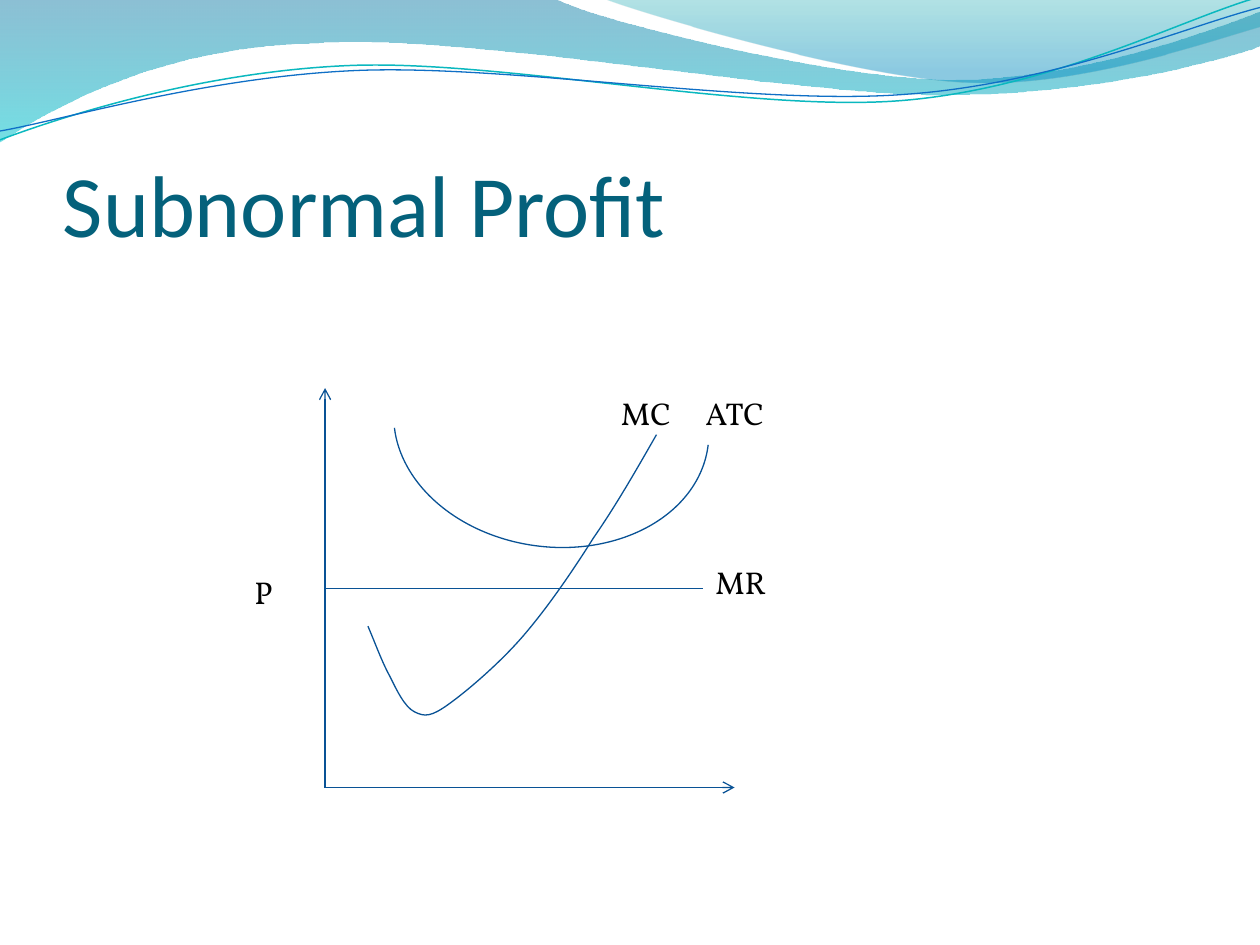
from dataclasses import dataclass
from math import cos, radians, sin

from lxml import etree
from pptx import Presentation
from pptx.dml.color import RGBColor
from pptx.enum.shapes import MSO_CONNECTOR, MSO_SHAPE
from pptx.enum.text import MSO_ANCHOR, MSO_AUTO_SIZE
from pptx.oxml.ns import qn
from pptx.util import Inches, Pt

STRAIGHT = MSO_CONNECTOR.STRAIGHT
ARC = MSO_SHAPE.ARC
BOTTOM = MSO_ANCHOR.BOTTOM
GROW = MSO_AUTO_SIZE.SHAPE_TO_FIT_TEXT


@dataclass(frozen=True)
class Theme:
    title_font: str = "Calibri"
    label_font: str = "Vollkorn"
    title_size: int = 50
    label_size: int = 18
    title_color: str = "04617B"
    label_color: str = "000000"
    diagram_color: str = "095295"
    teal: str = "0AB8BF"
    blue: str = "0F6FC6"
    thin: float = 0.75
    thick: float = 0.85
    wave_stops: tuple = ((0, "0074A1", 45), (1, "00C6CF", 55))
    crest_stops: tuple = ((0, "00A1A9", 30), (0.8, "008BBF", 45))


def turn(point, pivot, degrees):
    angle = radians(degrees)
    across, down = point[0] - pivot[0], point[1] - pivot[1]
    return (pivot[0] + across * cos(angle) - down * sin(angle),
            pivot[1] + across * sin(angle) + down * cos(angle))


class SlideBuilder:
    def __init__(self, page, theme):
        self.page = page
        self.theme = theme

    def outline(self, shape, color, width):
        shape.line.color.rgb = RGBColor.from_string(color)
        shape.line.width = Pt(width)

    def freeform(self, segments, closed, rotation=0, pivot=(0, 0)):
        points = [turn(segment[index:index + 2], pivot, -rotation)
                  for segment in segments for index in range(0, len(segment), 2)]
        corners = [(Inches(x), Inches(y)) for x, y in points]
        builder = self.page.shapes.build_freeform(*corners[0])
        builder.add_line_segments(corners[1:], close=closed)
        shape = builder.convert_to_shape()
        shape.shadow.inherit = False
        shape.rotation = rotation
        straight = iter(list(shape.element.spPr.iter(qn("a:lnTo"))))
        for segment in segments[1:]:
            steps = [next(straight) for _ in range(len(segment) // 2)]
            if len(steps) == 3:
                bend = etree.Element(qn("a:cubicBezTo"))
                steps[0].addprevious(bend)
                for step in steps:
                    bend.append(step[0])
                    step.getparent().remove(step)
        return shape

    def band(self, segments, stops):
        shape = self.freeform(segments, True)
        shape.line.fill.background()
        shape.fill.gradient()
        shape.fill.gradient_angle = 270
        for stop, (position, color, _) in zip(shape.fill.gradient_stops, stops):
            stop.position = position
            stop.color.rgb = RGBColor.from_string(color)
        tags = shape.element.spPr.iter(qn("a:srgbClr"))
        for tag, (_, _, opacity) in zip(tags, stops):
            etree.SubElement(tag, qn("a:alpha"), val=str(opacity * 1000))

    def curve(self, segments, color, width, rotation=0, pivot=(0, 0)):
        shape = self.freeform(segments, False, rotation, pivot)
        shape.fill.background()
        self.outline(shape, color, width)
        return shape

    def group(self, shapes):
        self.page.shapes.add_group_shape(shapes)

    def line(self, start, end, arrow=False):
        ends = [Inches(value) for value in (*start, *end)]
        connector = self.page.shapes.add_connector(STRAIGHT, *ends)
        self.outline(connector, self.theme.diagram_color, self.theme.thin)
        properties = connector._element.spPr
        if arrow:
            etree.SubElement(properties.find(qn("a:ln")), qn("a:tailEnd"), type="arrow")
        etree.SubElement(properties, qn("a:effectLst"))

    def arc(self, left, top, width, height, rotation, angles):
        shape = self.page.shapes.add_shape(
            ARC, Inches(left), Inches(top), Inches(width), Inches(height))
        shape.shadow.inherit = False
        shape.rotation = rotation
        for index, angle in enumerate(angles):
            shape.adjustments[index] = angle
        shape.fill.background()
        self.outline(shape, self.theme.diagram_color, self.theme.thin)

    def text(self, content, left, top, width, height, font, size, color):
        box = self.page.shapes.add_textbox(
            Inches(left), Inches(top), Inches(width), Inches(height))
        frame = box.text_frame
        frame.word_wrap = True
        para = frame.paragraphs[0]
        para.text = content
        para.font.name = font
        para.font.size = Pt(size)
        para.font.color.rgb = RGBColor.from_string(color)
        return frame

    def title(self, content):
        theme = self.theme
        frame = self.text(content, 0.5, 0.77, 9, 1.25,
                          theme.title_font, theme.title_size, theme.title_color)
        frame.vertical_anchor = BOTTOM
        frame.margin_left = frame.margin_right = frame.margin_bottom = 0
        frame.margin_top = Inches(0.05)

    def label(self, content, left, top, width):
        theme = self.theme
        frame = self.text(content, left, top, width, 0.4,
                          theme.label_font, theme.label_size, theme.label_color)
        frame.auto_size = GROW


def main():
    deck = Presentation()
    deck.slide_width, deck.slide_height = Inches(10), Inches(7.5)
    theme = Theme()
    slide = SlideBuilder(deck.slides.add_slide(deck.slide_layouts[6]), theme)

    slide.band([
        (0, 0), (4.4, -0.01),
        (4.76, 0.17, 6.64, 0.63, 7.58, 0.63), (8.53, 0.63, 9.58, 0.26, 10, 0.09),
        (10.01, 0.36),
        (9.83, 0.44, 8.7, 0.76, 7.46, 0.75), (6.22, 0.75, 3.82, 0.28, 2.57, 0.34),
        (1.29, 0.36, 0.46, 0.83, -0.01, 1.13), (0, 0),
    ], theme.wave_stops)
    slide.band([
        (4.79, -0.01),
        (5.09, 0.11, 6.82, 0.62, 7.69, 0.65), (8.56, 0.69, 9.61, 0.32, 10, 0.21),
        (10, 0), (4.79, -0.01),
    ], theme.crest_stops)

    tilt = 357.3
    teal_wave = slide.curve([
        (0, 1.11),
        (0.48, 0.93, 1.58, 0.57, 2.77, 0.52), (3.95, 0.47, 5.93, 0.89, 7.13, 0.8),
        (8.33, 0.71, 9.38, 0.15, 9.98, -0.02),
    ], theme.teal, theme.thick, tilt, (4.99, 0.58))
    blue_wave = slide.curve([
        (0, 1.04),
        (0.47, 0.96, 1.64, 0.61, 2.83, 0.56), (4.03, 0.51, 5.97, 0.84, 7.17, 0.75),
        (8.36, 0.67, 9.41, 0.21, 10, 0.06),
    ], theme.blue, theme.thin, tilt, (5, 0.59))
    slide.group([teal_wave, blue_wave])

    slide.title("Subnormal Profit")

    origin = (2.58, 6.25)
    price = 4.67
    slide.line(origin, (origin[0], 3.08), arrow=True)
    slide.line(origin, (5.83, origin[1]), arrow=True)
    slide.line((origin[0], price), (5.58, price))
    slide.arc(3.41, 2.12, 1.93, 2.51, 97.8, (161.6, 48.75))
    slide.curve([
        (2.92, 4.97),
        (2.98, 5.11, 3.03, 5.25, 3.09, 5.36), (3.15, 5.48, 3.21, 5.61, 3.29, 5.65),
        (3.37, 5.69, 3.42, 5.69, 3.56, 5.59), (3.7, 5.49, 3.96, 5.27, 4.15, 5.05),
        (4.34, 4.83, 4.54, 4.54, 4.71, 4.27), (4.89, 4.01, 5.05, 3.73, 5.21, 3.45),
    ], theme.diagram_color, theme.thin)

    for content, left, top, width in (
        ("P", 1.92, 4.5, 0.58),
        ("ATC", 5.5, 3.08, 0.92),
        ("MC", 4.83, 3.08, 0.75),
        ("MR", 5.58, 4.42, 0.83),
    ):
        slide.label(content, left, top, width)

    deck.save("out.pptx")


if __name__ == "__main__":
    main()
